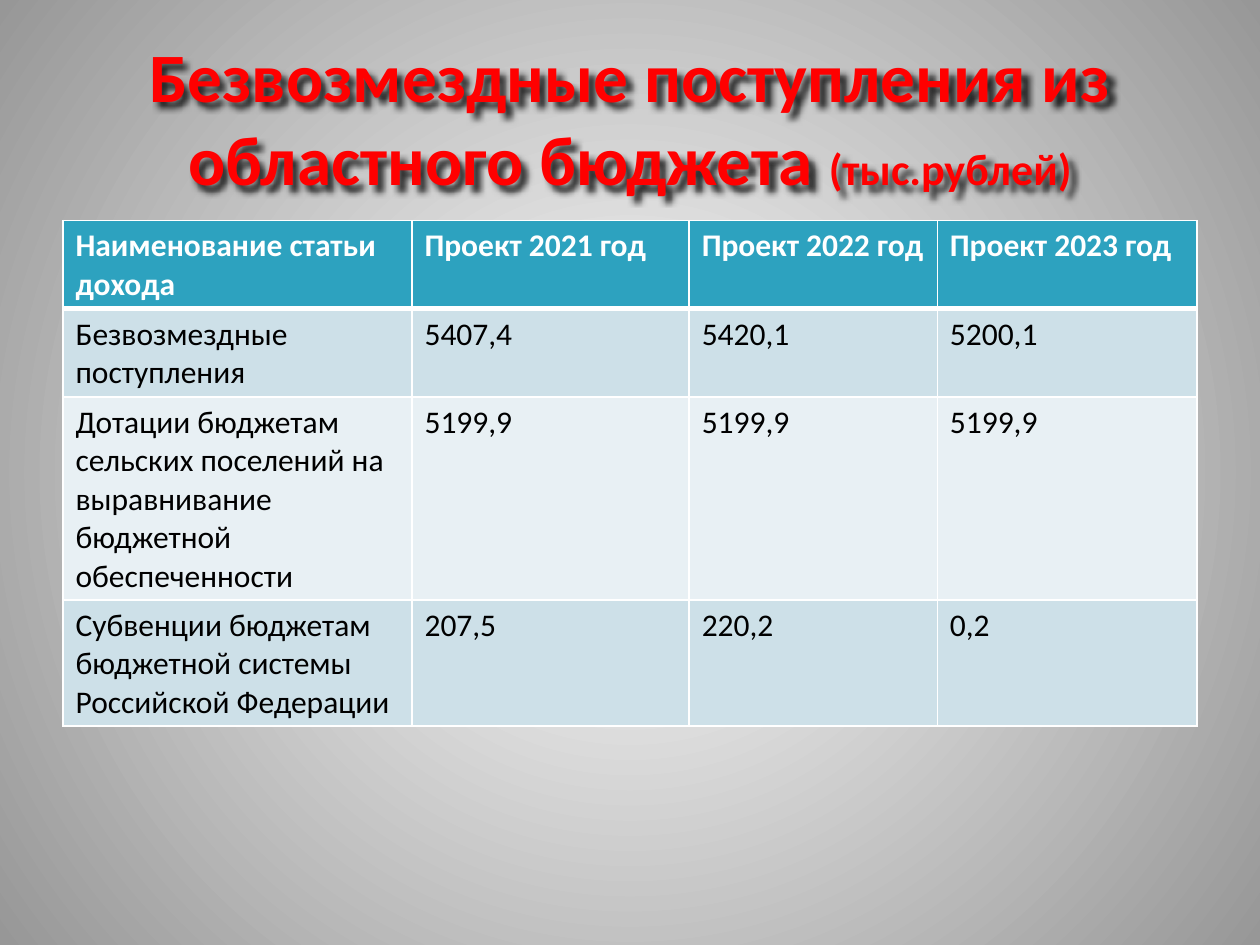
from pptx import Presentation
from pptx.dml.color import RGBColor
from pptx.enum.text import MSO_ANCHOR, PP_ALIGN
from pptx.oxml import parse_xml
from pptx.oxml.ns import nsdecls, qn
from pptx.util import Inches, Pt

MIDDLE = MSO_ANCHOR.MIDDLE
CENTER = PP_ALIGN.CENTER
NS = nsdecls("a")

WIDTHS = [2.77, 2.2, 1.97, 2.06]
HEIGHTS = [0.7, 0.7, 1.61, 1]
ROWS = [
    ["Наименование статьи дохода", "Проект 2021 год", "Проект 2022 год", "Проект 2023 год"],
    ["Безвозмездные поступления", "5407,4", "5420,1", "5200,1"],
    ["Дотации бюджетам сельских поселений на выравнивание бюджетной обеспеченности",
     "5199,9", "5199,9", "5199,9"],
    ["Субвенции бюджетам бюджетной системы Российской Федерации", "207,5", "220,2", "0,2"],
]


def color(code):
    return RGBColor.from_string(code)


class Deck:
    face = "Calibri"
    red = "FF0000"
    white = "FFFFFF"
    black = "000000"
    head = "2DA2BF"
    bands = ["CDE0E8", "E8F0F4"]

    def __init__(self, slide):
        self.slide = slide

    def font(self, font, size, code, bold):
        font.name = self.face
        font.size = Pt(size)
        font.bold = bold
        font.color.rgb = color(code)

    def backdrop(self, inner, outer):
        fill = self.slide.background.fill
        fill.gradient()
        for stop, code in zip(fill.gradient_stops, (inner, outer)):
            stop.color.rgb = color(code)
        # Turn the linear gradient into a circular one
        grad = self.slide.element.find(".//" + qn("a:gradFill"))
        grad.replace(grad.find(qn("a:lin")), parse_xml(
            f'<a:path {NS} path="circle"><a:fillToRect l="50000" t="50000" '
            'r="50000" b="50000"/></a:path>'))

    def title(self, left, top, width, height, parts):
        box = self.slide.shapes.add_textbox(
            Inches(left), Inches(top), Inches(width), Inches(height))
        frame = box.text_frame
        frame.word_wrap = True
        frame.vertical_anchor = MIDDLE
        para = frame.paragraphs[0]
        para.alignment = CENTER
        for text, size in parts:
            run = para.add_run()
            run.text = text
            self.font(run.font, size, self.red, True)
        # Soft shadow behind the letters
        box.element.spPr.append(parse_xml(
            f'<a:effectLst {NS}><a:outerShdw blurRad="38100" dist="50800" dir="2700000">'
            '<a:srgbClr val="000000"><a:alpha val="80000"/></a:srgbClr>'
            '</a:outerShdw></a:effectLst>'))

    def border(self, cell, side, width):
        cell._tc.get_or_add_tcPr().append(parse_xml(
            f'<a:ln{side} {NS} w="{Pt(width)}"><a:solidFill>'
            f'<a:srgbClr val="{self.white}"/></a:solidFill></a:ln{side}>'))

    def cell(self, cell, text, row):
        top = row == 0
        cell.text = text
        self.font(cell.text_frame.paragraphs[0].font, 18,
                  self.white if top else self.black, top)
        # The rule under the header row is thicker
        for side in "LRTB":
            thick = (row, side) in ((0, "B"), (1, "T"))
            self.border(cell, side, 3 if thick else 1)
        cell.fill.solid()
        cell.fill.fore_color.rgb = color(self.head if top else self.bands[(row - 1) % 2])

    def table(self, left, top, widths, heights, rows):
        grid = self.slide.shapes.add_table(
            len(rows), len(widths), Inches(left), Inches(top),
            Inches(sum(widths)), Inches(sum(heights))).table
        for col, width in zip(grid.columns, widths):
            col.width = Inches(width)
        for row, height in zip(grid.rows, heights):
            row.height = Inches(height)
        for r, texts in enumerate(rows):
            for c, text in enumerate(texts):
                self.cell(grid.cell(r, c), text, r)


def main():
    prs = Presentation()
    prs.slide_width = Inches(10)
    prs.slide_height = Inches(7.5)
    deck = Deck(prs.slides.add_slide(prs.slide_layouts[6]))

    # Background
    deck.backdrop("FFFFFF", "979797")

    # Title
    deck.title(0.5, 0.3, 9, 1.25, [
        ("Безвозмездные поступления из областного бюджета ", 39.6),
        ("(тыс.рублей)", 25.2),
    ])

    # Income table
    deck.table(0.5, 1.75, WIDTHS, HEIGHTS, ROWS)

    prs.save("out.pptx")


if __name__ == "__main__":
    main()
